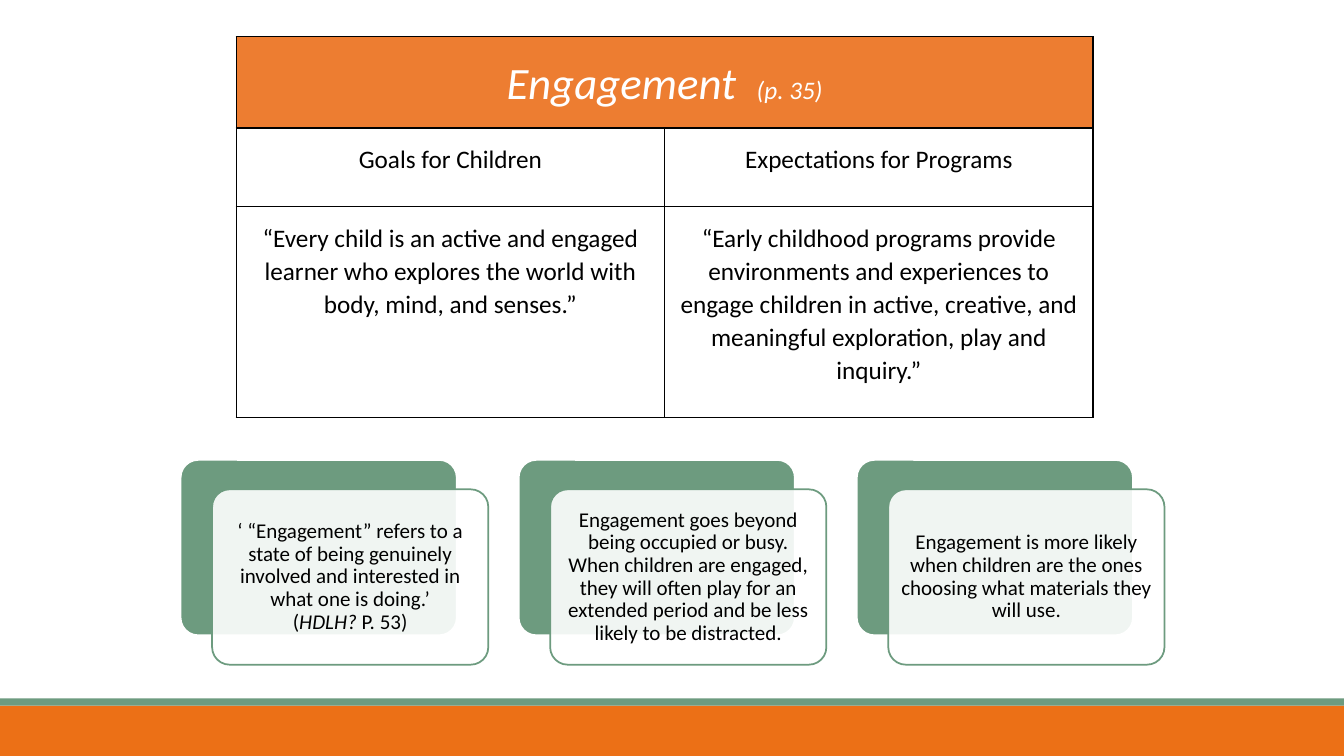
from pptx import Presentation
from pptx.dml.color import RGBColor
from pptx.enum.shapes import MSO_SHAPE
from pptx.enum.text import MSO_ANCHOR, PP_ALIGN
from pptx.oxml import parse_xml
from pptx.oxml.ns import nsdecls, qn
from pptx.util import Pt
from lxml import etree

RECT = MSO_SHAPE.RECTANGLE
ROUNDED = MSO_SHAPE.ROUNDED_RECTANGLE
MIDDLE = MSO_ANCHOR.MIDDLE
TOP = MSO_ANCHOR.TOP
CENTER = PP_ALIGN.CENTER

PX = 9525  # 96 px to the inch
FONT = "Calibri"
COLORS = {
    "bar": "EC7016",
    "green": "6D9B7F",
    "header": "ED7D31",
    "white": "FFFFFF",
    "black": "000000",
}

# Each run is (text, size, italic)
TITLE = [("Engagement  ", 32, True), ("(p. 35)", 18, True)]
ROWS = [
    ["Goals for Children", "Expectations for Programs"],
    [
        "“Every child is an active and engaged learner who explores the world "
        "with body, mind, and senses.”",
        "“Early childhood programs provide environments and experiences to "
        "engage children in active, creative, and meaningful exploration, "
        "play and inquiry.”",
    ],
]
CARDS = [
    [
        ("‘ “Engagement” refers to a state of being genuinely involved and "
         "interested in what one is doing.’\v(", 15, False),
        ("HDLH? ", 15, True),
        ("P. 53)", 15, False),
    ],
    [("Engagement goes beyond being occupied or busy. When children are "
      "engaged, they will often play for an extended period and be less "
      "likely to be distracted.", 15, False)],
    [("Engagement is more likely when children are the ones choosing what "
      "materials they will use.", 15, False)],
]


def px(n):
    return int(n * PX)


def rgb(name):
    return RGBColor.from_string(COLORS[name])


def write_runs(tf, runs, color, spacing):
    """Fill the first paragraph with centred runs."""
    p = tf.paragraphs[0]
    p.alignment = CENTER
    p.line_spacing = spacing
    for i, (text, size, italic) in enumerate(runs):
        lines = text.split("\v")
        for j, line in enumerate(lines):
            if j:
                p.add_line_break()
            r = p.add_run()
            r.text = line
            r.font.name = FONT
            r.font.size = Pt(size)
            r.font.italic = italic
            r.font.color.rgb = rgb(color)


def add_box(slide, kind, x, y, w, h, fill, line=None):
    s = slide.shapes.add_shape(kind, px(x), px(y), px(w), px(h))
    s.shadow.inherit = False
    s.fill.solid()
    s.fill.fore_color.rgb = rgb(fill)
    if line:
        s.line.color.rgb = rgb(line)
        s.line.width = Pt(1.25)
    else:
        s.line.fill.background()
    if kind == ROUNDED:
        s.adjustments[0] = 0.1
    return s


def add_card(slide, x, y, runs):
    """A green back plate with a translucent text card in front."""
    w, h = 263, 167
    add_box(slide, ROUNDED, x, y, w, h, "green", "white")
    s = add_box(slide, ROUNDED, x + 30, y + 28, w, h, "white", "green")
    color = s.fill._xPr.find(qn("a:solidFill"))[0]
    etree.SubElement(color, qn("a:alpha"), val="90000")
    tf = s.text_frame
    tf.word_wrap = True
    tf.vertical_anchor = MIDDLE
    tf.margin_left = tf.margin_right = px(6)
    tf.margin_top = tf.margin_bottom = px(6)
    write_runs(tf, runs, "black", 0.9)


def style_cell(cell, fill, top, anchor):
    tcPr = cell._tc.get_or_add_tcPr()
    for side in "LRTB":
        tcPr.append(parse_xml(
            f'<a:ln{side} {nsdecls("a")} w="12700"><a:solidFill>'
            f'<a:srgbClr val="{COLORS["black"]}"/></a:solidFill></a:ln{side}>'))
    cell.fill.solid()
    cell.fill.fore_color.rgb = rgb(fill)
    cell.margin_left = cell.margin_right = px(7)
    cell.margin_top = px(top)
    cell.margin_bottom = 0
    cell.vertical_anchor = anchor


def add_goals_table(slide, x, y, col_width, heights):
    frame = slide.shapes.add_table(len(heights), 2, px(x), px(y),
                                   px(2 * col_width), px(sum(heights)))
    table = frame.table
    table.first_row = table.horz_banding = False
    for col in table.columns:
        col.width = px(col_width)
    for row, height in zip(table.rows, heights):
        row.height = px(height)

    # Header across both columns
    table.cell(0, 0).merge(table.cell(0, 1))
    for c in range(2):
        style_cell(table.cell(0, c), "header", 0, MIDDLE)
    write_runs(table.cell(0, 0).text_frame, TITLE, "white", 1.07)

    # Goals and expectations
    for r, texts in enumerate(ROWS, start=1):
        for c, text in enumerate(texts):
            cell = table.cell(r, c)
            style_cell(cell, "white", 14, TOP)
            write_runs(cell.text_frame, [(text, 18, False)], "black", 1.07)


def main():
    prs = Presentation()
    prs.slide_width, prs.slide_height = px(1280), px(720)
    slide = prs.slides.add_slide(prs.slide_layouts[6])

    # Footer bars
    add_box(slide, RECT, 0, 672, 1280, 48, "bar")
    add_box(slide, RECT, 0, 665, 1280, 7, "green")

    add_goals_table(slide, 225, 35, 408, [87, 75, 201])

    # Row of cards
    for i, runs in enumerate(CARDS):
        add_card(slide, 172 + 322 * i, 438, runs)

    prs.save("out.pptx")


if __name__ == "__main__":
    main()
